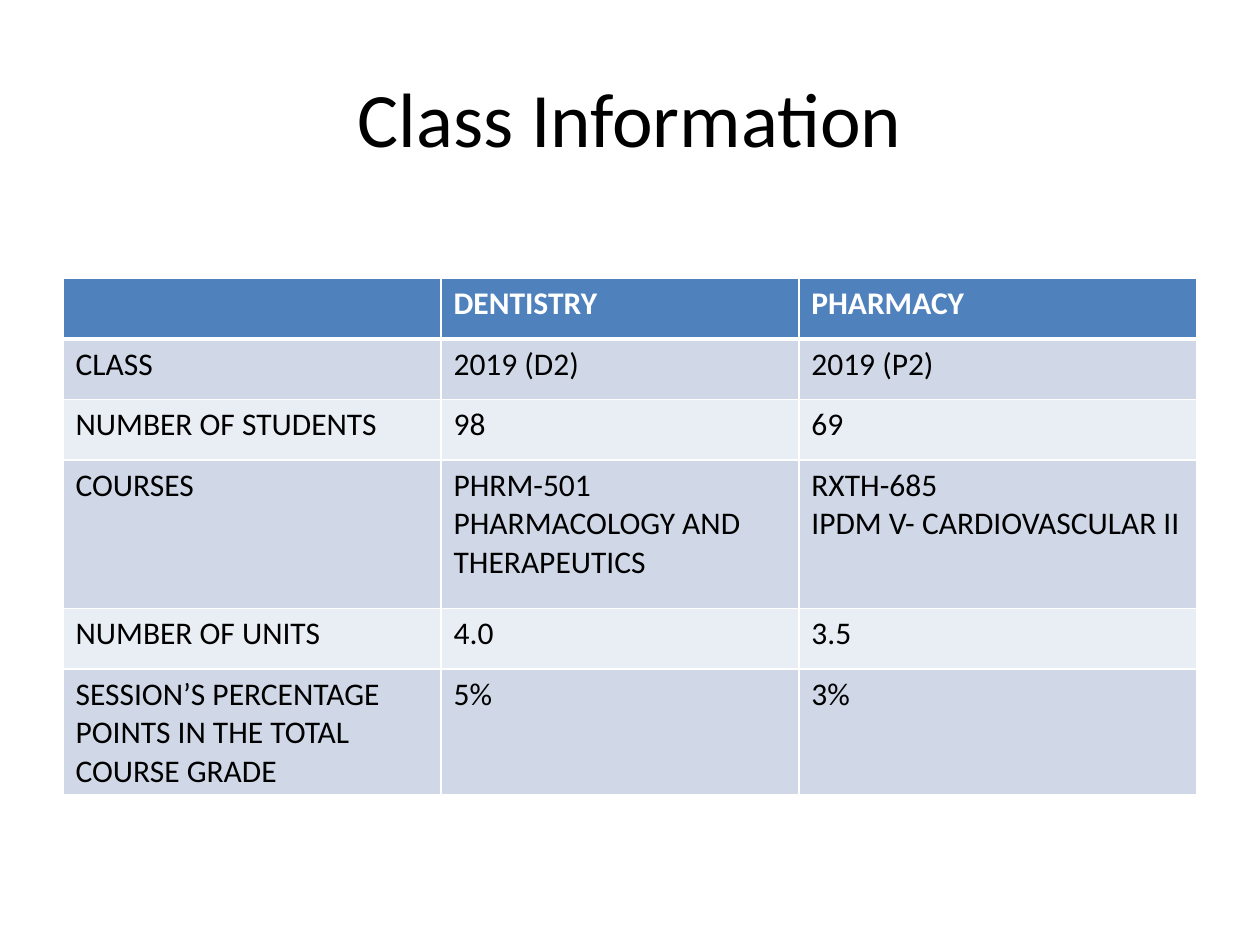
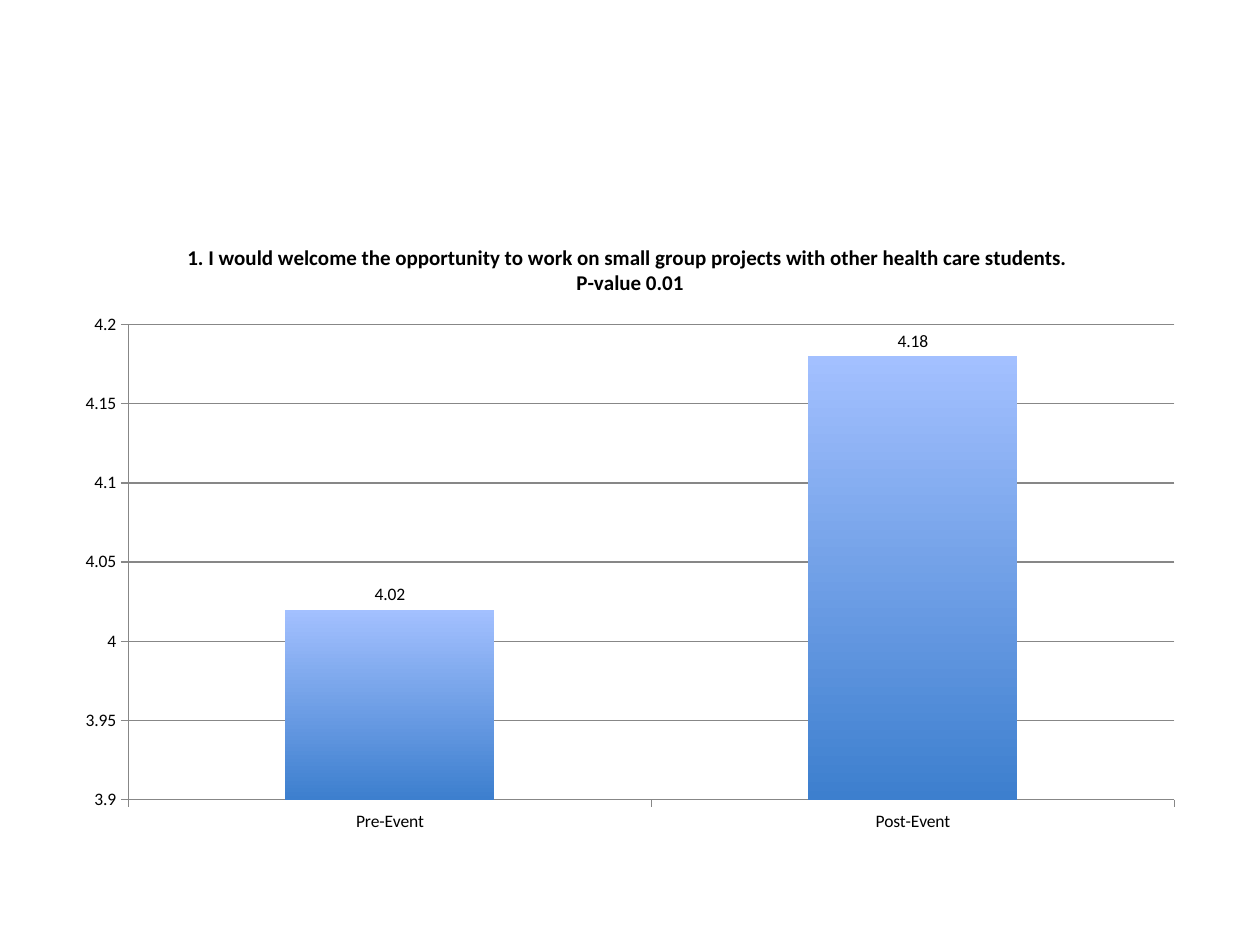
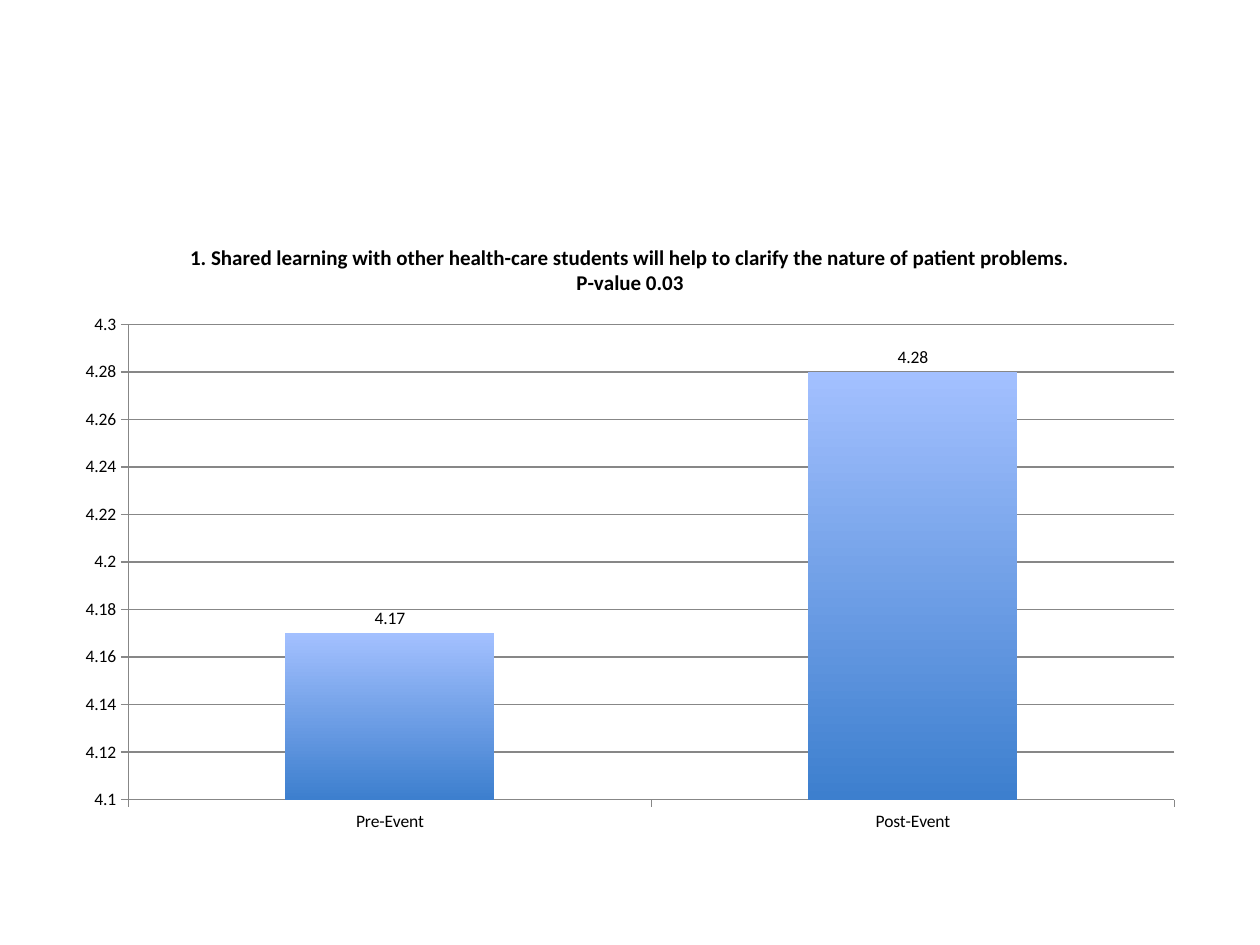
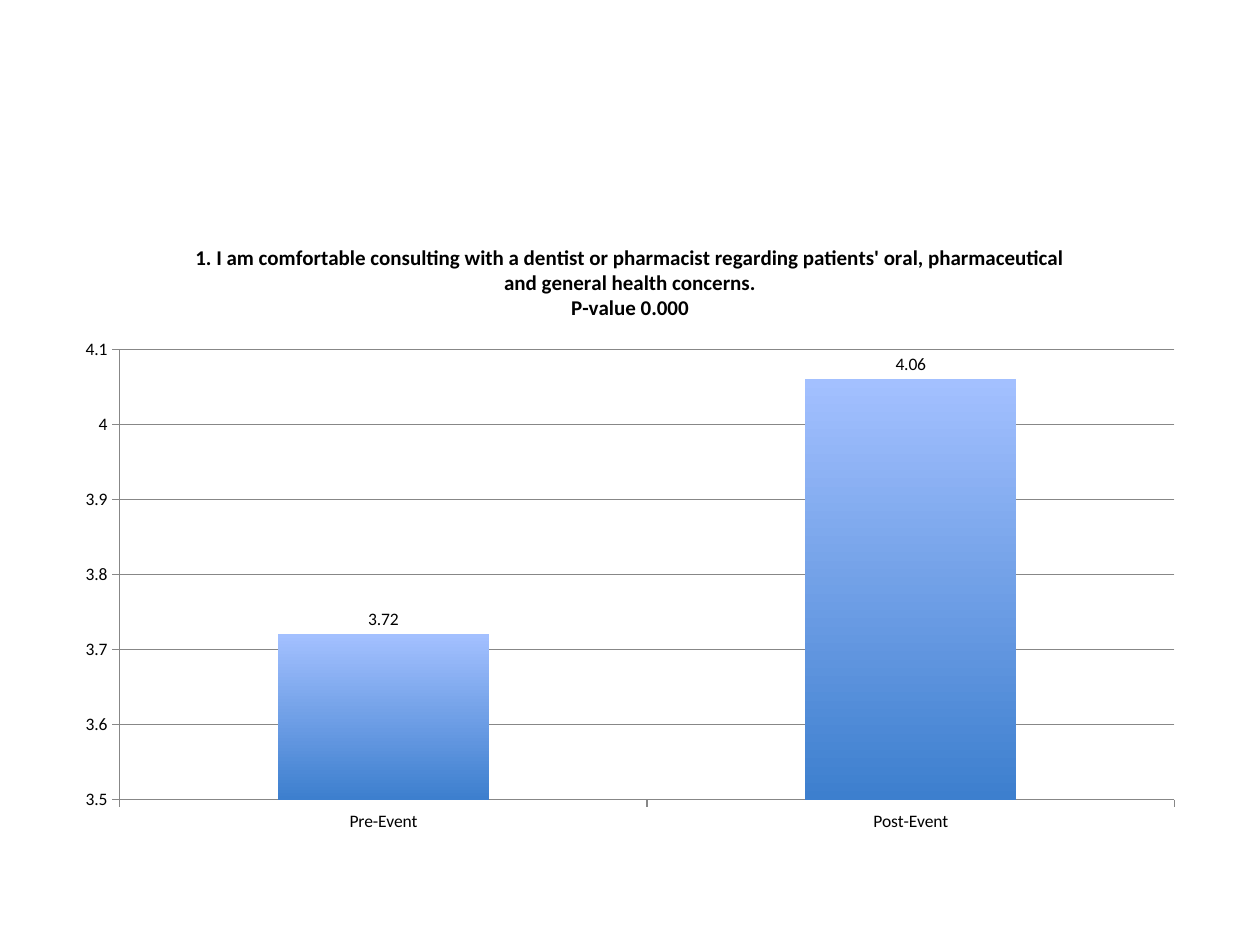
import lxml.etree
import pptx
import pptx.chart.data
import pptx.dml.color
import pptx.enum.chart
import pptx.enum.text
import pptx.oxml.ns
import pptx.util

Inches = pptx.util.Inches
Pt = pptx.util.Pt

FONT = "Calibri"
COLORS = {
    "text": "000000",
    "white": "FFFFFF",
    "header": "4F81BD",
    "odd_row": "D0D8E8",
    "even_row": "E9EDF4",
    "axis": "878787",
    "bar_top": "A3C0FF",
    "bar_bottom": "3D7FCE",
}

TITLE = "Class Information"
CLASS_ROWS = [
    ("", "DENTISTRY", "PHARMACY"),
    ("CLASS", "2019 (D2)", "2019 (P2)"),
    ("NUMBER OF STUDENTS", "98", "69"),
    ("COURSES", "PHRM-501\nPHARMACOLOGY AND THERAPEUTICS",
     "RXTH-685\nIPDM V- CARDIOVASCULAR II"),
    ("NUMBER OF UNITS", "4.0", "3.5"),
    ("SESSION’S PERCENTAGE POINTS IN THE TOTAL COURSE GRADE", "5%", "3%"),
]
COLUMN_WIDTHS = [3, 2.84, 3.16]
ROW_HEIGHTS = [0.48, 0.48, 0.48, 1.18, 0.48, 0.83]

EVENTS = ["Pre-Event", "Post-Event"]
QUESTIONS = [
    {
        "title": "1. I would welcome the opportunity to work on small group projects "
                 "with other health care students. \nP-value 0.01",
        "scores": (4.02, 4.18),
        "scale": (3.9, 4.2, 0.05),
    },
    {
        "title": "1. Shared learning with other health-care students will help to "
                 "clarify the nature of patient problems.\nP-value 0.03",
        "scores": (4.17, 4.28),
        "scale": (4.1, 4.3, 0.02),
    },
    {
        "title": "1. I am comfortable consulting with a dentist or pharmacist regarding "
                 "patients' oral, pharmaceutical and general health concerns.\nP-value 0.000",
        "scores": (3.72, 4.06),
        "scale": (3.5, 4.1, 0.1),
    },
]

LEFT, WIDTH = 0.5, 9


def rgb(name):
    return pptx.dml.color.RGBColor.from_string(COLORS[name])


def set_font(font, size, color="text", bold=False):
    font.name = FONT
    font.size = Pt(size)
    font.bold = bold
    font.color.rgb = rgb(color)


def set_borders(cell, bottom_width):
    properties = cell._tc.get_or_add_tcPr()
    widths = {"lnL": 1, "lnR": 1, "lnT": 1, "lnB": bottom_width}
    for position, (side, width) in enumerate(widths.items()):
        line = lxml.etree.Element(pptx.oxml.ns.qn("a:" + side), w=str(Pt(width)))
        fill = lxml.etree.SubElement(line, pptx.oxml.ns.qn("a:solidFill"))
        lxml.etree.SubElement(fill, pptx.oxml.ns.qn("a:srgbClr"), val=COLORS["white"])
        properties.insert(position, line)


def add_title(slide):
    box = slide.shapes.add_textbox(Inches(LEFT), Inches(0.3), Inches(WIDTH), Inches(1.25))
    frame = box.text_frame
    frame.word_wrap = True
    frame.vertical_anchor = pptx.enum.text.MSO_ANCHOR.MIDDLE
    frame.text = TITLE
    heading = frame.paragraphs[0]
    heading.alignment = pptx.enum.text.PP_ALIGN.CENTER
    set_font(heading.font, 44)


def add_class_table(slide):
    table = slide.shapes.add_table(
        len(CLASS_ROWS), len(COLUMN_WIDTHS), Inches(LEFT), Inches(2.21),
        Inches(WIDTH), Inches(sum(ROW_HEIGHTS))).table
    for column, width in zip(table.columns, COLUMN_WIDTHS):
        column.width = Inches(width)
    for row, height in zip(table.rows, ROW_HEIGHTS):
        row.height = Inches(height)
    for r, entries in enumerate(CLASS_ROWS):
        is_header = r == 0
        band = "header" if is_header else "odd_row" if r % 2 else "even_row"
        for c, entry in enumerate(entries):
            cell = table.cell(r, c)
            cell.text = entry
            cell.fill.solid()
            cell.fill.fore_color.rgb = rgb(band)
            set_borders(cell, 3 if is_header else 1)
            for paragraph in cell.text_frame.paragraphs:
                set_font(paragraph.font, 18, "white" if is_header else "text", is_header)


def style_bars(plot):
    plot.gap_width = 150
    plot.vary_by_categories = False
    fill = plot.series[0].format.fill
    fill.gradient()
    fill.gradient_angle = 90
    for stop, color in zip(fill.gradient_stops, ("bar_bottom", "bar_top")):
        stop.color.rgb = rgb(color)
    plot.has_data_labels = True
    labels = plot.data_labels
    labels.show_value = True
    labels.position = pptx.enum.chart.XL_LABEL_POSITION.OUTSIDE_END
    set_font(labels.font, 10)


def add_question_chart(slide, question):
    data = pptx.chart.data.CategoryChartData()
    data.categories = EVENTS
    data.add_series("Series 1", question["scores"])
    chart = slide.shapes.add_chart(
        pptx.enum.chart.XL_CHART_TYPE.COLUMN_CLUSTERED, Inches(LEFT), Inches(1.75),
        Inches(WIDTH), Inches(4.95), data).chart
    set_font(chart.font, 10)
    chart.has_legend = False
    chart.has_title = True
    chart.chart_title.include_in_layout = False
    chart.chart_title.text_frame.text = question["title"]
    for paragraph in chart.chart_title.text_frame.paragraphs:
        set_font(paragraph.font, 12, bold=True)

    scores = chart.value_axis
    scores.minimum_scale, scores.maximum_scale, scores.major_unit = question["scale"]
    scores.has_major_gridlines = True
    for lines in (scores, chart.category_axis, scores.major_gridlines):
        lines.format.line.color.rgb = rgb("axis")
        lines.format.line.width = Pt(0.75)
    for axis in (scores, chart.category_axis):
        axis.major_tick_mark = pptx.enum.chart.XL_TICK_MARK.OUTSIDE
        axis.minor_tick_mark = pptx.enum.chart.XL_TICK_MARK.NONE
    style_bars(chart.plots[0])


def main():
    deck = pptx.Presentation()
    deck.slide_width = Inches(10)
    deck.slide_height = Inches(7.5)
    blank = deck.slide_layouts[6]
    class_slide = deck.slides.add_slide(blank)
    add_title(class_slide)
    add_class_table(class_slide)
    for question in QUESTIONS:
        add_question_chart(deck.slides.add_slide(blank), question)
    deck.save("out.pptx")


if __name__ == "__main__":
    main()
